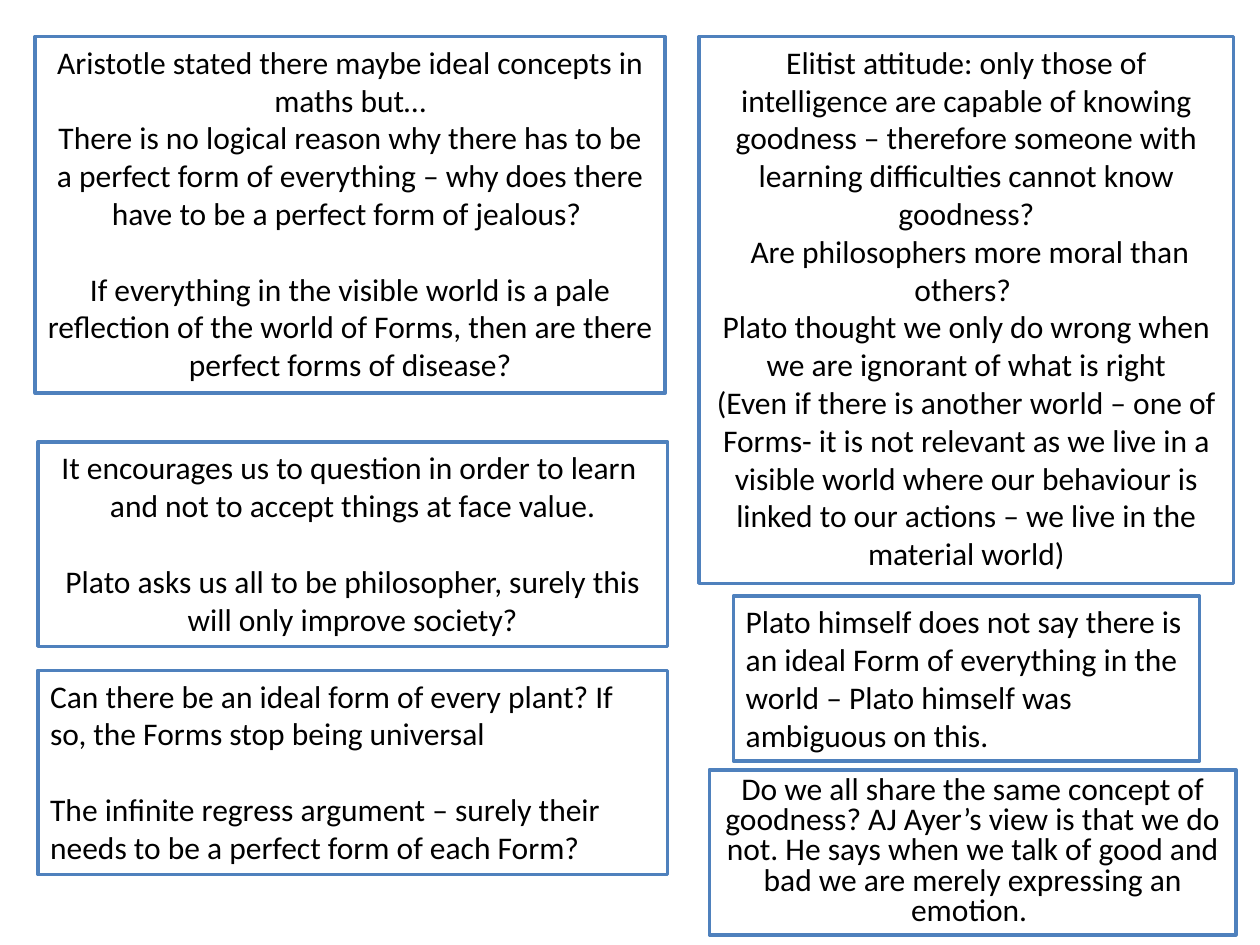
from pptx import Presentation
from pptx.dml.color import RGBColor
from pptx.enum.shapes import MSO_SHAPE
from pptx.enum.text import MSO_ANCHOR, MSO_AUTO_SIZE, PP_ALIGN
from pptx.util import Inches, Pt

RECT = MSO_SHAPE.RECTANGLE
TOP = MSO_ANCHOR.TOP
GROW = MSO_AUTO_SIZE.SHAPE_TO_FIT_TEXT
LEFT, CENTER = PP_ALIGN.LEFT, PP_ALIGN.CENTER
GAP = Pt(21.6)  # one line of 18 pt text


def color(code):
    return RGBColor.from_string(code)


# Each box: left, top, width, height, alignment, line spacing, blocks.
# A block is a list of paragraphs; blocks are set one line apart.
boxes = [
    (0.28, 0.29, 5, 2.83, CENTER, 1.0, [
        ["Aristotle stated there maybe ideal concepts in maths but…",
         "There is no logical reason why there has to be a perfect form of "
         "everything – why does there have to be a perfect form of jealous? "],
        ["If everything in the visible world is a pale reflection of the "
         "world of Forms, then are there perfect forms of disease?"]]),
    (0.3, 3.51, 5, 1.62, CENTER, 1.0, [
        ["It encourages us to question in order to learn ",
         "and not to accept things at face value."],
        ["Plato asks us all to be philosopher, surely this will only "
         "improve society?"]]),
    (5.55, 0.29, 4.24, 4.34, CENTER, 1.0, [
        ["Elitist attitude: only those of intelligence are capable of "
         "knowing goodness – therefore someone with learning difficulties "
         "cannot know goodness?",
         " Are philosophers more moral than others? ",
         "Plato thought we only do wrong when we are ignorant of what is "
         "right",
         "(Even if there is another world – one of Forms- it is not relevant "
         "as we live in a visible world where our behaviour is linked to our "
         "actions – we live in the material world)"]]),
    (0.3, 5.32, 5, 1.62, LEFT, 1.0, [
        ["Can there be an ideal form of every plant? If so, the Forms stop "
         "being universal"],
        ["The infinite regress argument – surely their needs to be a perfect "
         "form of each Form?"]]),
    (5.82, 4.73, 3.7, 1.31, LEFT, 1.0, [
        ["Plato himself does not say there is an ideal Form of everything in "
         "the world – Plato himself was ambiguous on this."]]),
    (5.63, 6.11, 4.18, 1.31, CENTER, 0.8, [
        ["Do we all share the same concept of goodness? AJ Ayer’s view is "
         "that we do not. He says when we talk of good and bad we are merely "
         "expressing an emotion. "]]),
]

deck = Presentation()
deck.slide_width, deck.slide_height = Inches(10), Inches(7.5)
slide = deck.slides.add_slide(deck.slide_layouts[6])

for left, top, width, height, align, spacing, blocks in boxes:
    box = slide.shapes.add_shape(
        RECT, Inches(left), Inches(top), Inches(width), Inches(height))
    box.shadow.inherit = False
    box.fill.solid()
    box.fill.fore_color.rgb = color("FFFFFF")
    box.line.color.rgb = color("4F81BD")
    box.line.width = Pt(2)

    frame = box.text_frame
    frame.word_wrap = True
    frame.auto_size = GROW
    frame.vertical_anchor = TOP
    para = None
    for block in blocks:
        for place, text in enumerate(block):
            first = para is None
            para = frame.paragraphs[0] if first else frame.add_paragraph()
            para.alignment = align
            para.line_spacing = spacing
            if place == 0 and not first:
                para.space_before = GAP
            run = para.add_run()
            run.text = text
            run.font.name = "Calibri"
            run.font.size = Pt(18)
            run.font.color.rgb = color("000000")

deck.save("out.pptx")
